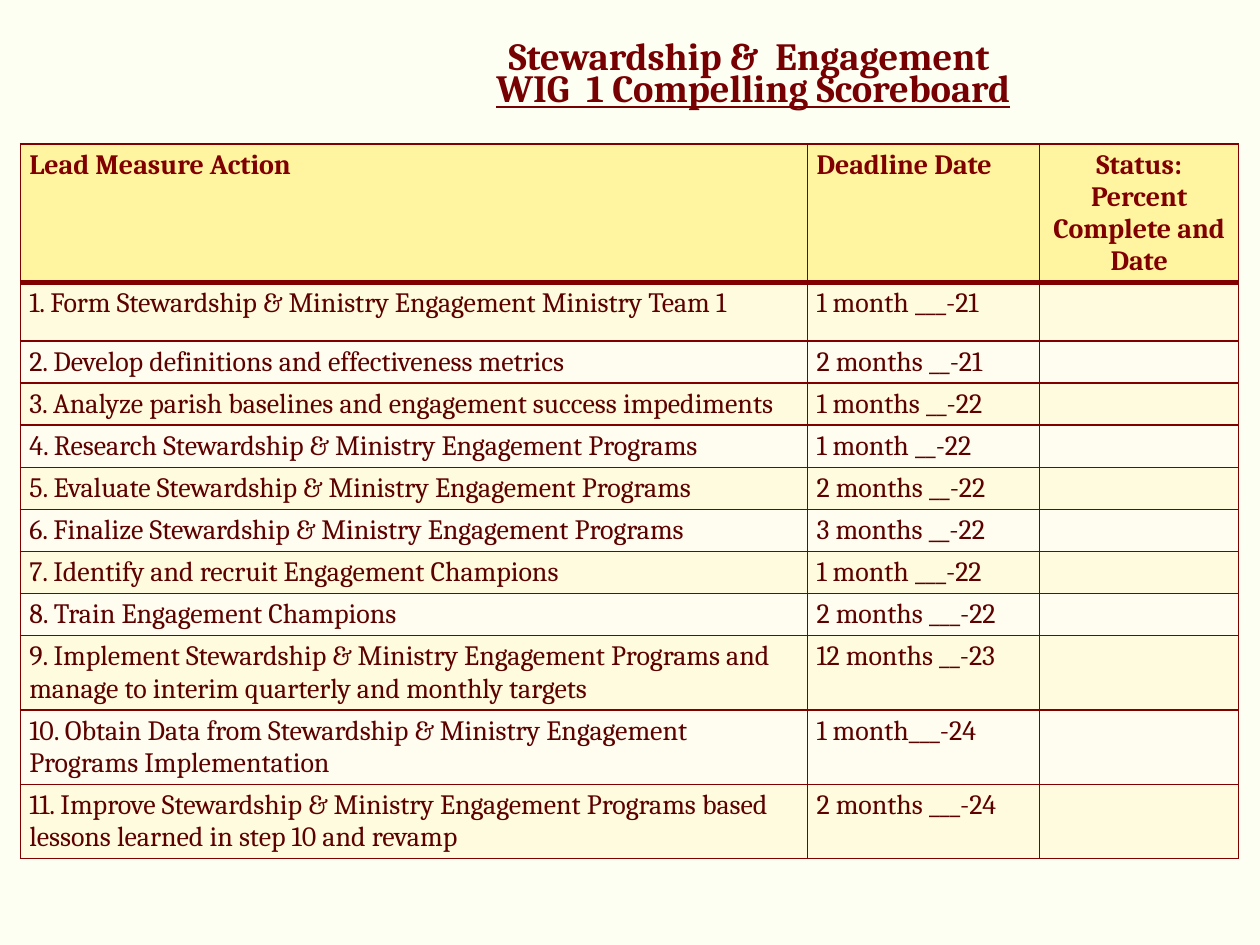
"""Build the Stewardship & Engagement scoreboard slide."""
from dataclasses import dataclass

from lxml.etree import SubElement
from pptx import Presentation
from pptx.dml.color import RGBColor
from pptx.enum.text import MSO_ANCHOR as Anchor, PP_ALIGN as Align
from pptx.oxml.ns import qn
from pptx.util import Cm, Pt

CREAM = RGBColor(0xFE, 0xFF, 0xF3)
YELLOW = RGBColor(0xFF, 0xF4, 0xA0)
BANDS = RGBColor(0xFF, 0xFB, 0xDF), RGBColor(0xFF, 0xFD, 0xF0)
MAROON = RGBColor(0x80, 0x00, 0x00)
TITLE_RED = RGBColor(0x76, 0x00, 0x02)
BODY_RED = RGBColor(0x5D, 0x01, 0x00)

TITLE_FORMAT = {"name": "Cambria", "size": Pt(22), "bold": True}
HEADER_FORMAT = {"name": "Cambria", "size": Pt(16), "bold": True}
BODY_FORMAT = HEADER_FORMAT | {"bold": False}
CELL_MARGINS = {"margin_left": Cm(0.18), "margin_right": Cm(0.18),
                "margin_top": Cm(0.1), "margin_bottom": Cm(0.1)}
COLUMN_WIDTHS = Cm(15.87), Cm(4.68), Cm(4.01)
HEADER_HEIGHT, FIRST_HEIGHT, ROW_HEIGHT = Cm(1.04), Cm(1.18), Cm(0.76)
HEADINGS = "Lead Measure Action", "Deadline Date", "Status: Percent Complete and Date"


@dataclass(frozen=True)
class Measure:
    """A lead measure and its deadline."""
    action: str
    deadline: str


MEASURES = [
    Measure("Form Stewardship & Ministry Engagement Ministry Team 1", "1 month ___-21"),
    Measure("Develop definitions and effectiveness metrics", "2 months __-21"),
    Measure("Analyze parish baselines and engagement success impediments", "1 months __-22"),
    Measure("Research Stewardship & Ministry Engagement Programs", "1 month __-22"),
    Measure("Evaluate Stewardship & Ministry Engagement Programs", "2 months __-22"),
    Measure("Finalize Stewardship & Ministry Engagement Programs", "3 months __-22"),
    Measure("Identify and recruit Engagement Champions", "1 month ___-22"),
    Measure("Train Engagement Champions", "2 months ___-22"),
    Measure("Implement Stewardship & Ministry Engagement Programs and manage to "
            "interim quarterly and monthly targets", "12 months __-23"),
    Measure("Obtain Data from Stewardship & Ministry Engagement Programs "
            "Implementation", "1 month___-24"),
    Measure("Improve Stewardship & Ministry Engagement Programs based lessons "
            "learned in step 10 and revamp", "2 months ___-24"),
]


def set_all(target, values: dict) -> None:
    """Set every named attribute on the target."""
    for name, value in values.items():
        setattr(target, name, value)


def add_span(para, text: str, formats: dict, color: RGBColor) -> None:
    """Add one formatted run to a paragraph."""
    span = para.add_run()
    span.text = text
    set_all(span.font, formats)
    span.font.color.rgb = color


def add_border(cell, side: str, points: int) -> None:
    """Draw one maroon edge of a cell."""
    line = SubElement(cell._tc.get_or_add_tcPr(), qn(f"a:ln{side}"), w=str(Pt(points)))
    SubElement(SubElement(line, qn("a:solidFill")), qn("a:srgbClr"), val=str(MAROON))


def fill_cell(cell, text: str, row: int, column: int) -> None:
    """Style a cell by its place in the table and write its text."""
    header = row == 0
    set_all(cell, CELL_MARGINS)
    edges = {"L": 1, "R": 1, "T": 3 if row == 1 else 1, "B": 3 if header else 1}
    for side, points in edges.items():
        add_border(cell, side, points)
    cell.fill.solid()
    cell.fill.fore_color.rgb = YELLOW if header else BANDS[(row - 1) % 2]
    para = cell.text_frame.paragraphs[0]
    if header and column == 2:
        para.alignment = Align.CENTER
    if text:
        add_span(para, text, HEADER_FORMAT if header else BODY_FORMAT,
                 MAROON if header else BODY_RED)
    else:
        ending = SubElement(para._p, qn("a:endParaRPr"), sz="1600")
        SubElement(ending, qn("a:latin"), typeface="Cambria")


def add_scoreboard(page) -> None:
    """Add the table of lead measures."""
    rows = [HEADINGS] + [(f"{number}. {measure.action}", measure.deadline, "")
                         for number, measure in enumerate(MEASURES, 1)]
    heights = [HEADER_HEIGHT, FIRST_HEIGHT] + [ROW_HEIGHT] * (len(rows) - 2)
    table = page.shapes.add_table(len(rows), len(HEADINGS), Cm(0.41), Cm(2.9),
                                  sum(COLUMN_WIDTHS), sum(heights)).table
    for column, width in zip(table.columns, COLUMN_WIDTHS):
        column.width = width
    for row, (texts, height) in enumerate(zip(rows, heights)):
        table.rows[row].height = height
        for column, text in enumerate(texts):
            fill_cell(table.cell(row, column), text, row, column)


def add_title(page) -> None:
    """Add the two-line title with its second line underlined."""
    box = page.shapes.add_textbox(Cm(7.82), Cm(0.36), Cm(14.73), Cm(2.39))
    frame = box.text_frame
    set_all(frame, {"word_wrap": True, "vertical_anchor": Anchor.MIDDLE})
    lines = {"Stewardship &  Engagement ": False, "WIG  1 Compelling Scoreboard": True}
    for index, (text, underline) in enumerate(lines.items()):
        para = frame.add_paragraph() if index else frame.paragraphs[0]
        set_all(para, {"alignment": Align.CENTER, "line_spacing": 0.7})
        add_span(para, text, TITLE_FORMAT | {"underline": underline}, TITLE_RED)


def main() -> None:
    """Build and save the deck."""
    deck = Presentation()
    set_all(deck, {"slide_width": Cm(25.4), "slide_height": Cm(19.05)})
    page = deck.slides.add_slide(deck.slide_layouts[6])
    page.background.fill.solid()
    page.background.fill.fore_color.rgb = CREAM
    add_scoreboard(page)
    add_title(page)
    deck.save("out.pptx")


if __name__ == "__main__":
    main()
